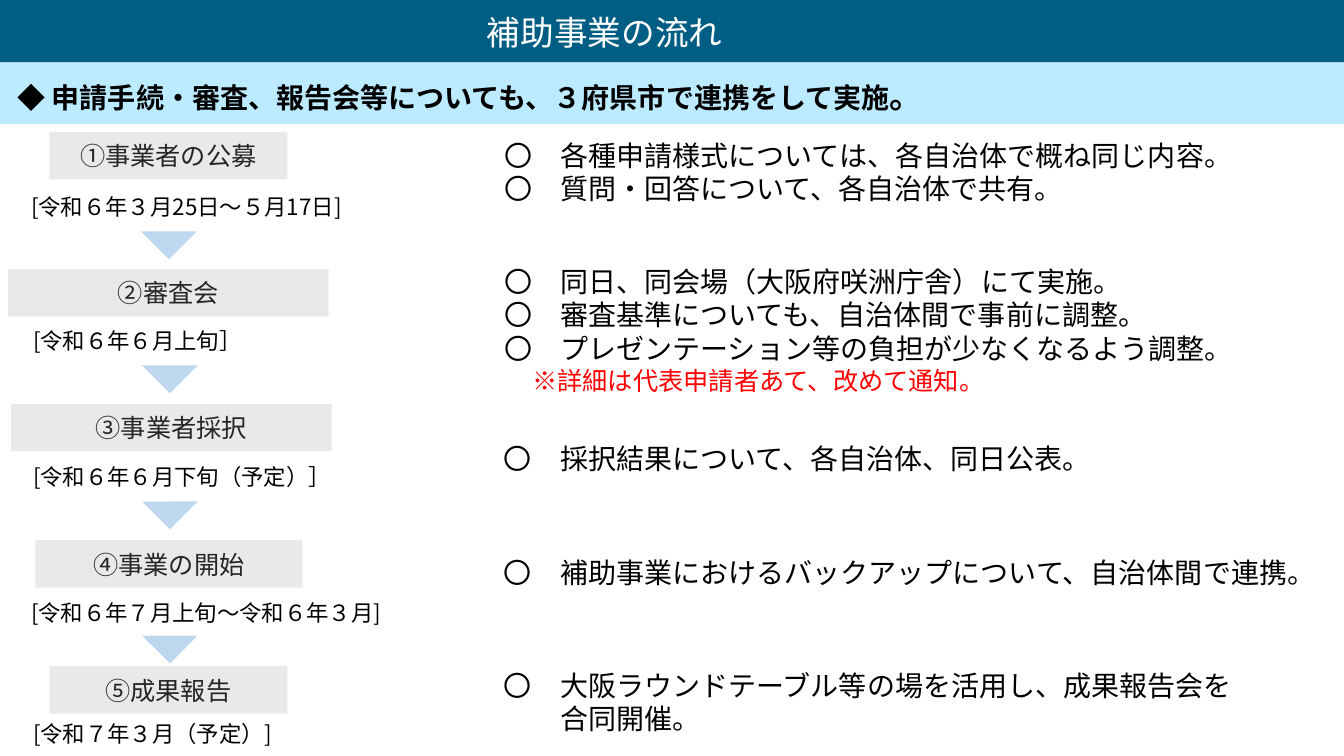
from dataclasses import dataclass

from lxml import etree
from pptx import Presentation
from pptx.dml.color import RGBColor
from pptx.enum import shapes, text
from pptx.oxml import ns
from pptx.util import Inches, Pt

FONT = "Noto Sans CJK JP"
BLACK = RGBColor(0x00, 0x00, 0x00)
WHITE = RGBColor(0xFF, 0xFF, 0xFF)
CHARCOAL = RGBColor(0x26, 0x26, 0x26)
RED = RGBColor(0xFF, 0x00, 0x00)
NAVY = RGBColor(0x00, 0x5D, 0x84)
SKY = RGBColor(0xBC, 0xEB, 0xFF)
PALE_BLUE = RGBColor(0xBD, 0xD7, 0xEE)
GREY = RGBColor(0xD9, 0xD9, 0xD9)

NOTE_LEFT = 4.9
HANGING = 0.56
REMARK_INDENT = 0.28
ARROW_SIZE = 0.39

Box = tuple[float, float, float, float]


@dataclass(frozen=True)
class Step:
    name: str
    name_box: Box
    date: str
    date_box: Box
    notes: list[str]
    note_top: float
    note_width: float
    note_height: float
    remark: str = ""
    arrow: tuple[float, float] | None = None


STEPS = [
    Step("①事業者の公募", (0.49, 1.31, 2.36, 0.47),
         "[令和６年３月25日～５月17日]", (0.21, 1.87, 3.34, 0.37),
         ["〇　各種申請様式については、各自治体で概ね同じ内容。",
          "〇　質問・回答について、各自治体で共有。"],
         1.32, 8.22, 0.77, arrow=(1.48, 2.1)),
    Step("②審査会", (0.08, 2.67, 3.18, 0.47),
         "[令和６年６月上旬］", (0.23, 3.2, 2.92, 0.37),
         ["〇　同日、同会場（大阪府咲洲庁舎）にて実施。",
          "〇　審査基準についても、自治体間で事前に調整。",
          "〇　プレゼンテーション等の負担が少なくなるよう調整。"],
         2.57, 8.16, 1.45, remark="※詳細は代表申請者あて、改めて通知。",
         arrow=(1.49, 3.43)),
    Step("③事業者採択", (0.11, 4.01, 3.18, 0.47),
         "[令和６年６月下旬（予定）］", (0.23, 4.55, 4.11, 0.37),
         ["〇　採択結果について、各自治体、同日公表。"],
         4.33, 6.09, 0.44, arrow=(1.49, 4.78)),
    Step("④事業の開始", (0.35, 5.36, 2.65, 0.47),
         "[令和６年７月上旬～令和６年３月]", (0.21, 5.89, 3.85, 0.37),
         ["〇　補助事業におけるバックアップについて、自治体間で連携。"],
         5.46, 8.34, 0.44, arrow=(1.49, 6.11)),
    Step("⑤成果報告", (0.49, 6.61, 2.36, 0.47),
         "[令和７年３月（予定）]", (0.23, 7.1, 2.7, 0.37),
         ["〇　大阪ラウンドテーブル等の場を活用し、成果報告会を\v合同開催。"],
         6.58, 7.49, 0.77),
]


def place(shape, box: Box) -> None:
    shape.left, shape.top, shape.width, shape.height = map(Inches, box)


def add_block(page, kind, box: Box, color: RGBColor, opacity: int = 100):
    """Add a borderless filled shape; opacity is a percentage."""
    block = page.shapes.add_shape(kind, *map(Inches, box))
    block.shadow.inherit = False
    block.line.fill.background()
    block.fill.solid()
    block.fill.fore_color.rgb = color
    if opacity < 100:
        srgb = block.element.spPr.find(".//" + ns.qn("a:srgbClr"))
        etree.SubElement(srgb, ns.qn("a:alpha"), val=str(opacity * 1000))
    return block


def add_text_box(page, box: Box):
    text_box = page.shapes.add_textbox(*map(Inches, box))
    text_box.text_frame.word_wrap = True
    text_box.text_frame.auto_size = text.MSO_AUTO_SIZE.SHAPE_TO_FIT_TEXT
    return text_box


def format_span(span, size: float, color: RGBColor, bold: bool) -> None:
    font = span.font
    font.size, font.bold, font.name = Pt(size), bold, FONT
    font.color.rgb = color
    latin = span.font._element.find(ns.qn("a:latin"))
    east_asian = etree.Element(ns.qn("a:ea"), typeface=FONT)
    latin.addnext(east_asian)


def write(para, words: str, *, size: float, color: RGBColor = BLACK,
          bold: bool = False, align=text.PP_ALIGN.LEFT, indent: float = 0,
          hanging: float = 0, spacing: float = 0) -> None:
    """Append formatted words to a paragraph; a vertical tab breaks the line."""
    para.alignment = align
    para.line_spacing = 1.0
    para.space_before = para.space_after = Pt(spacing)
    properties = para._p.get_or_add_pPr()
    properties.set("marL", str(Inches(indent + hanging)))
    properties.set("indent", str(-Inches(hanging)))
    if properties.find(ns.qn("a:buNone")) is None:
        etree.SubElement(properties, ns.qn("a:buNone"))
    for number, line in enumerate(words.split("\v")):
        if number:
            para.add_line_break()
        span = para.add_run()
        span.text = line
        format_span(span, size, color, bold)


def add_header(page) -> None:
    banner = add_block(page, shapes.MSO_SHAPE.RECTANGLE,
                       (0, 0.62, 13.33, 0.61), SKY)
    frame = banner.text_frame
    frame.margin_top = Inches(0.12)
    frame.vertical_anchor = text.MSO_ANCHOR.TOP
    for words, size in ((" ", 24),
                        ("◆ 申請手続・審査、報告会等についても、３府県市で連携をして実施", 20),
                        ("。", 24)):
        write(frame.paragraphs[0], words, size=size, bold=True, spacing=3)

    bar = add_block(page, shapes.MSO_SHAPE.RECTANGLE, (0, 0, 13.33, 0.62), NAVY)
    title = page.shapes.title
    title.element.addprevious(bar.element)
    place(title, (4.73, 0.07, 4.62, 0.5))
    title.text_frame.vertical_anchor = text.MSO_ANCHOR.TOP
    title.text_frame.auto_size = text.MSO_AUTO_SIZE.NONE
    write(title.text_frame.paragraphs[0], "補助事業の流れ", size=24, color=WHITE)


def add_notes(page, step: Step, bodies: list) -> None:
    """Write a step's notes, using a body placeholder when there are several."""
    box = (NOTE_LEFT, step.note_top, step.note_width, step.note_height)
    if len(step.notes) > 1:
        note = bodies.pop(0)
        place(note, box)
        note.text_frame.auto_size = text.MSO_AUTO_SIZE.NONE
    else:
        note = add_text_box(page, box)
    frame = note.text_frame
    for number, words in enumerate(step.notes):
        para = frame.add_paragraph() if number else frame.paragraphs[0]
        write(para, words, size=20, hanging=HANGING)
    if step.remark:
        write(frame.add_paragraph(), step.remark, size=18, color=RED,
              indent=REMARK_INDENT)


def add_step(page, step: Step, bodies: list) -> None:
    name = add_block(page, shapes.MSO_SHAPE.RECTANGLE, step.name_box, GREY, 56)
    name.text_frame.vertical_anchor = text.MSO_ANCHOR.MIDDLE
    write(name.text_frame.paragraphs[0], step.name, size=18, color=CHARCOAL,
          align=text.PP_ALIGN.CENTER)
    date = add_text_box(page, step.date_box)
    write(date.text_frame.paragraphs[0], step.date, size=16)
    if step.arrow:
        arrow = add_block(page, shapes.MSO_SHAPE.RIGHT_TRIANGLE,
                          (*step.arrow, ARROW_SIZE, ARROW_SIZE), PALE_BLUE)
        arrow.rotation = 314.9
    add_notes(page, step, bodies)


def main() -> None:
    deck = Presentation()
    deck.slide_width, deck.slide_height = Inches(13.33), Inches(7.5)
    page = deck.slides.add_slide(deck.slide_layouts.get_by_name("Two Content"))
    bodies = [page.placeholders[1], page.placeholders[2]]
    add_header(page)
    for step in STEPS:
        add_step(page, step, bodies)
    deck.save("out.pptx")


if __name__ == "__main__":
    main()
